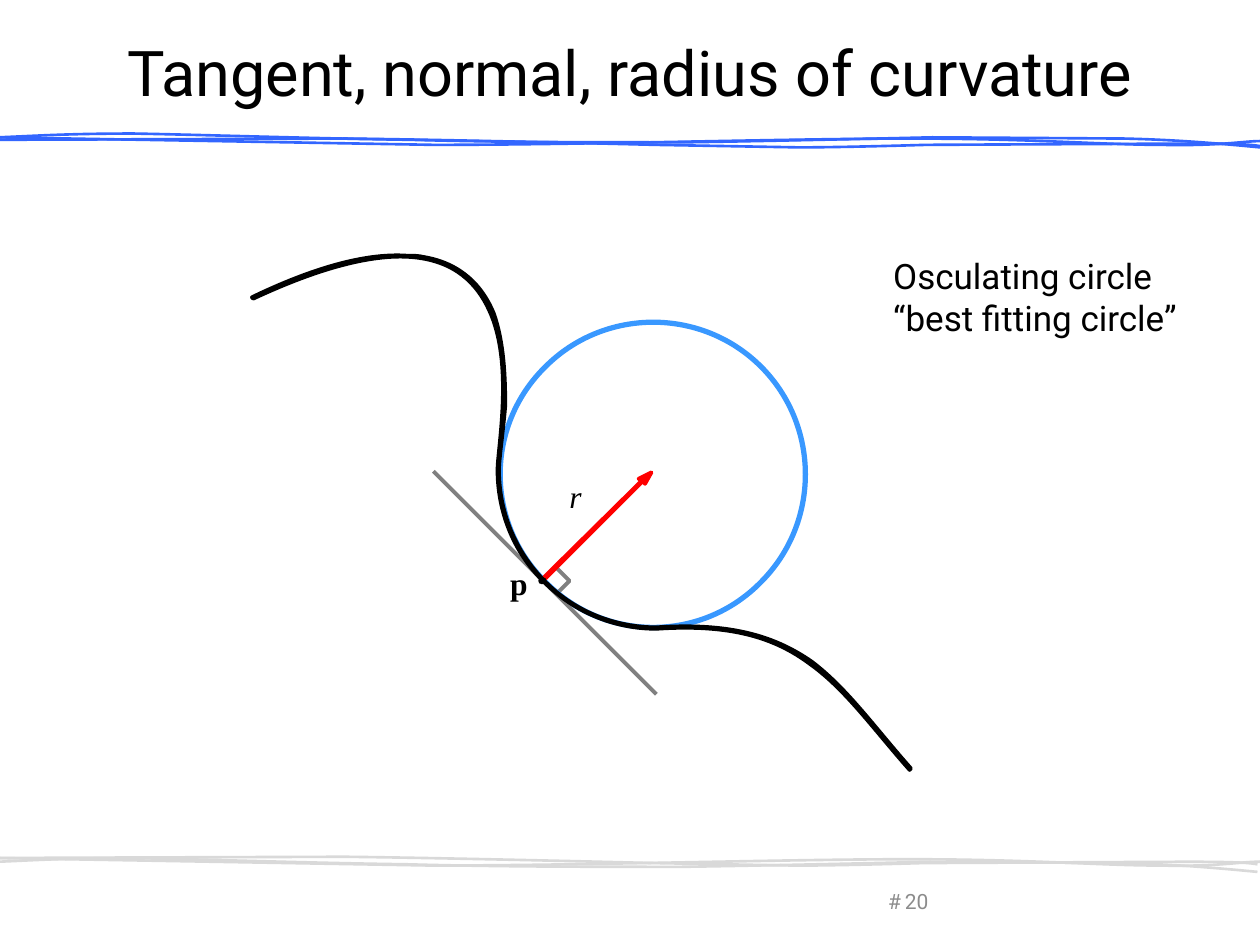
"""Build a slide on tangent, normal and radius of curvature."""
from lxml.etree import SubElement
from pptx import Presentation
from pptx.dml.color import RGBColor
from pptx.enum.shapes import MSO_CONNECTOR
from pptx.enum.text import MSO_ANCHOR, MSO_AUTO_SIZE, PP_ALIGN
from pptx.oxml.ns import qn
from pptx.util import Inches, Pt


def ink(fill, color):
    """Make a fill, line fill or font fill solid, or empty without a colour."""
    if color is None:
        fill.background()
        return
    fill.solid()
    fill.fore_color.rgb = RGBColor.from_string(color)


def trace(start, segments, color, width, fill=None, closed=False, dx=0, dy=0):
    """Draw an outline of lines (2 numbers) and cubic curves (6 numbers)."""
    pts = [start] + [seg[i:i + 2] for seg in segments for i in range(0, len(seg), 2)]
    pts = [((x + dx) * col, (y + dy) * row) for x, y in pts]
    fb = s.shapes.build_freeform(*pts[0], scale=1.0)
    fb.add_line_segments(pts[1:], close=closed)
    sp = fb.convert_to_shape()
    steps = iter(list(sp._element.iter(qn("a:lnTo"))))
    for seg in segments:
        step = next(steps)
        if len(seg) == 6:
            step.tag = qn("a:cubicBezTo")
            for other in (next(steps), next(steps)):
                step.append(other[0])
                other.getparent().remove(other)
    sp.shadow.inherit = False
    ink(sp.fill, fill)
    ink(sp.line.fill, color)
    if color:
        sp.line.width = Pt(width)


prs = Presentation()
prs.slide_width, prs.slide_height = Inches(10), Inches(7.5)
col, row = prs.slide_width / 10, prs.slide_height / 7.5
s = prs.slides.add_slide(prs.slide_layouts[5])

waves = [
    ((-0.01, 1.09), [(3.44, 1.15), (4.65, 1.15, 6.27, 1.1, 7.23, 1.1),
                     (8.19, 1.1, 8.76, 1.15, 9.22, 1.15),
                     (9.68, 1.16, 9.87, 1.12, 10, 1.12),
                     (10.13, 1.11, 10.06, 1.12, 9.99, 1.12)], 5.72),
    ((-0.01, 1.09), [(0.26, 1.08, 0.52, 1.06, 1.06, 1.06),
                     (1.61, 1.07, 2.52, 1.1, 3.25, 1.11),
                     (3.97, 1.13, 4.74, 1.13, 5.43, 1.13),
                     (6.12, 1.12, 7.4, 1.09, 7.4, 1.09), (8.92, 1.1),
                     (9.35, 1.11, 9.68, 1.14, 10, 1.17)], 5.75),
    ((-0.02, 1.11), [(2.75, 1.1), (3.62, 1.11, 5.2, 1.15, 5.2, 1.15),
                     (6.34, 1.17), (6.7, 1.17, 7.35, 1.15, 7.35, 1.15),
                     (9.43, 1.14), (9.87, 1.14, 9.94, 1.15, 10, 1.16)], 5.7),
]
for color, dx, shift in [("3366FF", 0, 0), ("D9D9D9", -0.02, 1)]:
    for start, segments, drop in waves:
        trace(start, segments, color, 1.5, dx=dx, dy=drop * shift)

title = s.shapes.title
title.left, title.top = int(0.5 * col), int(0.3 * row)
title.width, title.height = int(9 * col), int(0.53 * row)
tf = title.text_frame
tf.text = "Tangent, normal, radius of curvature"
tf.auto_size = MSO_AUTO_SIZE.NONE
tf.vertical_anchor = MSO_ANCHOR.MIDDLE
p = tf.paragraphs[0]
p.alignment = PP_ALIGN.CENTER
p.font.name, p.font.size = "Roboto", Pt(36)
ink(p.font.fill, "000000")

right_angle = [(4.52, 4.61), (4.41, 4.72)]
trace((4.41, 4.5), right_angle, "808080", 2.25)

circle = [(5.57, 5.1, 4.8, 5.1, 4.33, 4.62), (3.85, 4.15, 3.85, 3.38, 4.33, 2.91),
          (4.8, 2.44, 5.57, 2.44, 6.04, 2.91), (6.51, 3.38, 6.51, 4.15, 6.04, 4.62)]
trace((6.04, 4.62), circle, "3998FF", 3, closed=True)

tangent = s.shapes.add_connector(MSO_CONNECTOR.STRAIGHT, int(3.44 * col), int(3.74 * row),
                                 int(5.21 * col), int(5.51 * row))
ink(tangent.line.fill, "808080")
tangent.line.width = Pt(2.25)
SubElement(tangent._element.spPr, qn("a:effectLst"))

normal = [(5.17, 3.75), (5.12, 3.84), (5.1, 3.82), (4.31, 4.61), (4.3, 4.6),
          (5.09, 3.82), (5.07, 3.8)]
trace((5.07, 3.8), normal, "FF0000", 2.25, "FF0000", True)

curve = [
    (2.94, 2.01, 2.54, 2.1, 2, 2.36), (2.01, 2.37, 2.01, 2.37, 2.01, 2.37),
    (2.63, 2.08, 3.06, 2, 3.35, 2.05), (3.65, 2.1, 3.81, 2.28, 3.9, 2.5),
    (3.99, 2.72, 4, 2.99, 3.99, 3.22), (3.98, 3.45, 3.95, 3.65, 3.95, 3.73),
    (3.95, 4.05, 4.07, 4.38, 4.32, 4.62), (4.57, 4.87, 4.89, 4.99, 5.21, 4.99),
    (5.8, 4.95, 6.15, 5.06, 6.43, 5.27), (6.71, 5.47, 6.92, 5.77, 7.22, 6.11),
    (7.23, 6.1, 7.23, 6.1, 7.23, 6.1), (6.93, 5.76, 6.72, 5.46, 6.44, 5.25),
    (6.15, 5.05, 5.8, 4.94, 5.21, 4.98), (4.89, 4.98, 4.57, 4.86, 4.33, 4.62),
    (4.08, 4.37, 3.96, 4.05, 3.96, 3.73), (3.96, 3.65, 3.99, 3.45, 4.01, 3.22),
    (4.01, 2.99, 4, 2.72, 3.92, 2.49), (3.83, 2.27, 3.66, 2.09, 3.36, 2.04),
    (3.32, 2.03, 3.28, 2.03, 3.23, 2.03),
]
trace((3.23, 2.03), curve, "000000", 2.25, "000000", True)

dot = [(4.31, 4.64, 4.29, 4.64, 4.28, 4.63), (4.27, 4.62, 4.27, 4.6, 4.28, 4.59),
       (4.29, 4.58, 4.31, 4.58, 4.33, 4.59), (4.34, 4.6, 4.34, 4.62, 4.33, 4.63)]
trace((4.33, 4.63), dot, None, 0, "000000", True)

serif, sans = "Times New Roman", "Roboto"
for text, x, y, w, h, font, size, color, bold, italic, centred in [
    ("#", 6.95, 7, 0.3, 0.3, sans, 12, "8C8C8C", False, False, True),
    ("p", 3.95, 4.43, 0.47, 0.56, serif, 18, "000000", True, False, False),
    ("r", 4.42, 3.74, 0.41, 0.56, serif, 18, "000000", False, True, False),
    ("Osculating circle\v“best fitting circle”", 6.99, 1.97, 2.68, 0.77,
     sans, 20, "000000", False, False, False),
    ("20", 6.95, 6.95, 0.65, 0.4, sans, 12, "8C8C8C", False, False, True),
]:
    tf = s.shapes.add_textbox(int(x * col), int(y * row), int(w * col), int(h * row)).text_frame
    tf.word_wrap = True
    p = tf.paragraphs[0]
    p.text = text
    p.font.name, p.font.size = font, Pt(size)
    p.font.bold, p.font.italic = bold, italic
    ink(p.font.fill, color)
    if centred:
        tf.vertical_anchor = MSO_ANCHOR.MIDDLE
        p.alignment = PP_ALIGN.CENTER

prs.save("out.pptx")
